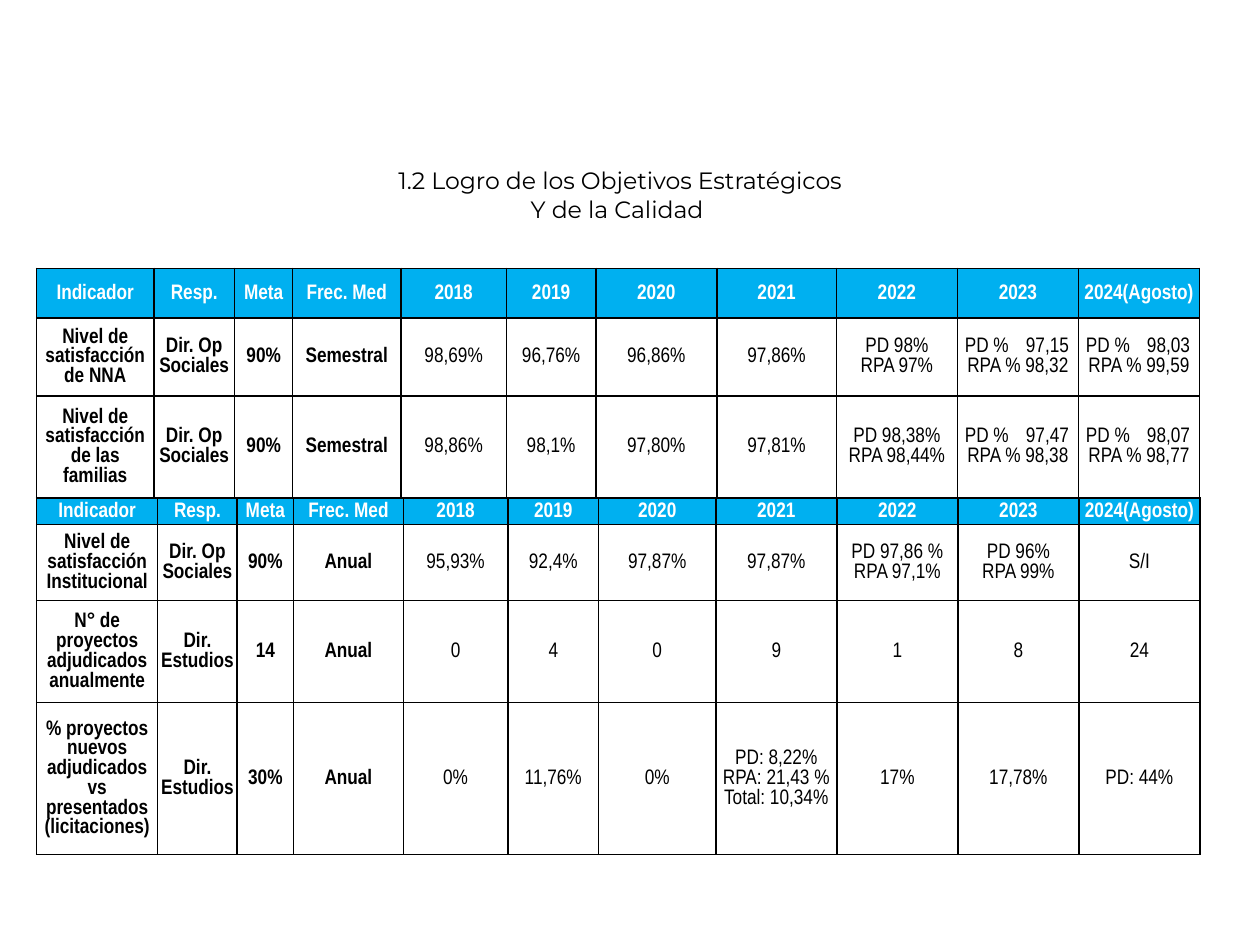
from lxml import etree
from pptx import Presentation
from pptx.enum import text as tx
from pptx.oxml import ns
from pptx.util import Cm, Pt

HUES = {"head": "00B0F0", "white": "FFFFFF", "ink": "000000"}
LEFT = 0.74
HEAD = ["Indicador", "Resp.", "Meta", "Frec. Med", "2018", "2019", "2020",
        "2021", "2022", "2023", "2024(Agosto)"]
LABELS = 4

SURVEY = [
    HEAD,
    ["Nivel de satisfacción de NNA", "Dir. Op Sociales", "90%", "Semestral",
     "98,69%", "96,76%", "96,86%", "97,86%", "PD 98%\nRPA 97%",
     "PD %\t97,15\nRPA % 98,32", "PD %\t98,03\nRPA % 99,59"],
    ["Nivel de satisfacción de las familias", "Dir. Op Sociales", "90%", "Semestral",
     "98,86%", "98,1%", "97,80%", "97,81%", "PD 98,38%\nRPA 98,44%",
     "PD %\t97,47\nRPA % 98,38", "PD %\t98,07\nRPA % 98,77"],
]
ANNUAL = [
    HEAD,
    ["Nivel de satisfacción Institucional", "Dir. Op Sociales", "90%", "Anual",
     "95,93%", "92,4%", "97,87%", "97,87%", "PD 97,86 %\nRPA 97,1%",
     "PD 96%\nRPA 99%", "S/I"],
    ["N° de proyectos adjudicados anualmente", "Dir. Estudios", "14", "Anual",
     "0", "4", "0", "9", "1", "8", "24"],
    ["% proyectos nuevos adjudicados vs presentados (licitaciones)",
     "Dir. Estudios", "30%", "Anual", "0%", "11,76%", "0%",
     "PD: 8,22%\vRPA: 21,43 %\vTotal: 10,34%", "17%", "17,78%", "PD: 44%"],
]


def paint(fill, hue):
    fill.solid()
    fill.fore_color.rgb = rgb(hue)


def rgb(hue):
    from pptx.dml.color import RGBColor
    return RGBColor.from_string(HUES[hue])


def add_tab(para, pos):
    stops = etree.SubElement(para._p.get_or_add_pPr(), ns.qn("a:tabLst"))
    etree.SubElement(stops, ns.qn("a:tab"), pos=str(Cm(pos)), algn="r")


def write(frame, words, size=12, face="Arial Narrow", hue="ink", bold=False):
    for i, line in enumerate(words.split("\n")):
        para = frame.paragraphs[0] if i == 0 else frame.add_paragraph()
        para.text = line
        para.alignment = tx.PP_ALIGN.CENTER
        para.line_spacing = 1.0
        para.space_before = Pt(0)
        if "\t" in line:
            para.alignment = tx.PP_ALIGN.LEFT
            add_tab(para, 2.1)
        for run in para.runs:
            font = run.font
            font.size, font.name, font.bold = Pt(size), face, bold
            font.color.rgb = rgb(hue)


def add_edges(cell):
    props = cell._tc.get_or_add_tcPr()
    for i, side in enumerate(("lnL", "lnR", "lnT", "lnB")):
        line = etree.Element(ns.qn("a:" + side), w=str(Pt(1)))
        fill = etree.SubElement(line, ns.qn("a:solidFill"))
        etree.SubElement(fill, ns.qn("a:srgbClr"), val=HUES["ink"])
        props.insert(i, line)


def fill_cell(cell, words, head, label):
    side = 0.15 if "\t" in words else 0.02
    cell.margin_left = cell.margin_right = Cm(side)
    cell.margin_top, cell.margin_bottom = Cm(0.02), Cm(0)
    cell.vertical_anchor = tx.MSO_ANCHOR.MIDDLE
    if head or label:
        paint(cell.fill, "head" if head else "white")
    else:
        cell.fill.background()
    write(cell.text_frame, words, hue="white" if head else "ink", bold=head or label)
    add_edges(cell)


def add_grid(slide, top, data, wides, highs):
    grid = slide.shapes.add_table(len(data), len(wides), Cm(LEFT), Cm(top),
                                  Cm(sum(wides)), Cm(sum(highs))).table
    grid.horz_banding = False
    for col, wide in zip(grid.columns, wides):
        col.width = Cm(wide)
    for row, high in zip(grid.rows, highs):
        row.height = Cm(high)
    for r, line in enumerate(data):
        for c, words in enumerate(line):
            fill_cell(grid.cell(r, c), words, r == 0, c < LABELS)


def add_title(slide, words):
    title = slide.shapes.title
    title.left, title.top = Cm(4.72), Cm(3.15)
    title.width, title.height = Cm(15.44), Cm(1.55)
    frame = title.text_frame
    frame.word_wrap = True
    frame.auto_size = tx.MSO_AUTO_SIZE.NONE
    frame.vertical_anchor = tx.MSO_ANCHOR.MIDDLE
    write(frame, words, size=13.5, face="Montserrat")


def main():
    deck = Presentation()
    deck.slide_width, deck.slide_height = Cm(25.4), Cm(19.05)
    slide = deck.slides.add_slide(deck.slide_layouts[5])
    add_title(slide, " 1.2 Logro de los Objetivos Estratégicos\nY de la Calidad")
    add_grid(slide, 5.41, SURVEY,
             [2.36, 1.63, 1.17, 2.18, 2.13, 1.8, 2.44, 2.41] + [2.44] * 3,
             [1, 1.57, 2.05])
    add_grid(slide, 10.04, ANNUAL,
             [2.44, 1.6, 1.14, 2.21, 2.11, 1.83, 2.36] + [2.44] * 4,
             [0.53, 1.54, 2.05, 3.07])
    deck.save("out.pptx")


if __name__ == "__main__":
    main()
